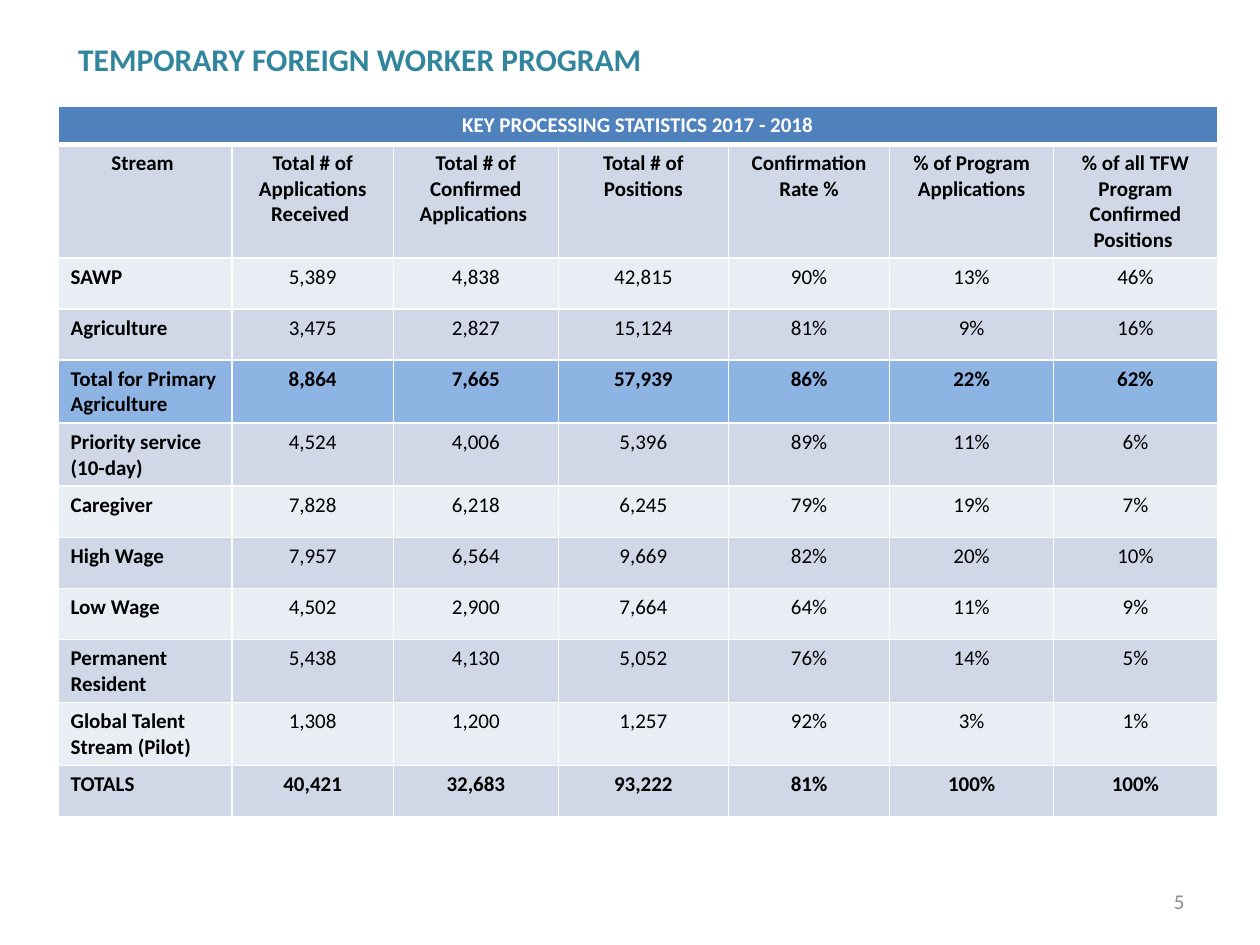
from lxml import etree
from pptx import Presentation
from pptx.dml.color import RGBColor
from pptx.enum import text
from pptx.oxml.ns import qn
from pptx.util import Pt

FONT = "Calibri"
WHITE, BLACK = "FFFFFF", "000000"
BANDS = ["E9EDF4", "D0D8E8"]
LEFT, CENTER, RIGHT = text.PP_ALIGN.LEFT, text.PP_ALIGN.CENTER, text.PP_ALIGN.RIGHT

BANNER = "KEY PROCESSING STATISTICS 2017 - 2018"
HEADINGS = ["Stream ", "Total # of Applications Received ",
            "Total # of Confirmed Applications ", "Total # of Positions",
            "Confirmation Rate %", "% of Program Applications",
            "% of all TFW Program Confirmed Positions "]
SUBTOTAL, TOTAL = "Total for Primary Agriculture", "TOTALS"
STREAMS = [
    ["SAWP", "5,389", "4,838", "42,815", "90%", "13%", "46%"],
    ["Agriculture", "3,475", "2,827", "15,124", "81%", "9%", "16%"],
    [SUBTOTAL, "8,864", "7,665", "57,939", "86%", "22%", "62%"],
    ["Priority service (10-day)", "4,524", "4,006", "5,396", "89%", "11%", "6%"],
    ["Caregiver", "7,828", "6,218", "6,245", "79%", "19%", "7%"],
    ["High Wage", "7,957", "6,564", "9,669", "82%", "20%", "10%"],
    ["Low Wage", "4,502", "2,900", "7,664", "64%", "11%", "9%"],
    ["Permanent Resident", "5,438", "4,130", "5,052", "76%", "14%", "5%"],
    ["Global Talent Stream (Pilot)", "1,308", "1,200", "1,257", "92%", "3%", "1%"],
    [TOTAL, "40,421", "32,683", "93,222", "81%", "100%", "100%"],
]
COLUMN_WIDTHS = [99.4, 92.2, 94.3, 97.2, 92.2, 93.6, 93.6]
BANNER_HEIGHT, ROW_HEIGHT = 22.1, 29.2


def color(value):
    return RGBColor.from_string(value)


def write(frame, words, align, size, ink, bold=False):
    paragraph = frame.paragraphs[0]
    paragraph.alignment = align
    run = paragraph.add_run()
    run.text = words
    for name, value in {"name": FONT, "size": Pt(size), "bold": bold}.items():
        setattr(run.font, name, value)
    run.font.color.rgb = color(ink)


def add_label(slide, box, words, align, size, ink, bold=False, **layout):
    frame = slide.shapes.add_textbox(*map(Pt, box)).text_frame
    for name, value in layout.items():
        setattr(frame, name, value)
    write(frame, words, align, size, ink, bold)


def add_borders(cell, widths):
    properties = cell._tc.get_or_add_tcPr()
    for side, width in zip("LRTB", widths):
        line = etree.SubElement(properties, qn(f"a:ln{side}"), w=str(Pt(width)))
        fill = etree.SubElement(line, qn("a:solidFill"))
        etree.SubElement(fill, qn("a:srgbClr"), val=WHITE)


def style_cell(cell, fill, widths=(1, 1, 1, 1)):
    add_borders(cell, widths)  # borders come before the fill in the cell
    cell.fill.solid()
    cell.fill.fore_color.rgb = color(fill)


def add_statistics(slide, left, top):
    body = [HEADINGS] + STREAMS
    height = BANNER_HEIGHT + ROW_HEIGHT * len(body)
    table = slide.shapes.add_table(
        len(body) + 1, len(HEADINGS), Pt(left), Pt(top),
        Pt(sum(COLUMN_WIDTHS)), Pt(height)).table
    for column, width in zip(table.columns, COLUMN_WIDTHS):
        column.width = Pt(width)
    for row in table.rows:
        row.height = Pt(ROW_HEIGHT)
    table.rows[0].height = Pt(BANNER_HEIGHT)

    # Banner across all columns
    for cell in table.rows[0].cells:
        style_cell(cell, "4F81BD", (1, 1, 1, 3))
    banner = table.cell(0, 0)
    banner.merge(table.cell(0, len(HEADINGS) - 1))
    write(banner.text_frame, BANNER, CENTER, 12, WHITE, True)

    # Headings and streams, in alternating bands
    for r, values in enumerate(body, 1):
        stream = values[0]
        fill = "8EB4E3" if stream == SUBTOTAL else BANDS[r % 2]
        bold_row = values is HEADINGS or stream in (SUBTOTAL, TOTAL)
        for c, value in enumerate(values):
            cell = table.cell(r, c)
            style_cell(cell, fill, (1, 1, 3 if r == 1 else 1, 1))
            align = LEFT if c == 0 and r > 1 else CENTER
            write(cell.text_frame, value, align, 12, BLACK, bold_row or c == 0)


def main():
    deck = Presentation()
    deck.slide_width, deck.slide_height = Pt(720), Pt(540)
    slide = deck.slides.add_slide(deck.slide_layouts[6])

    # Page number
    add_label(slide, (516, 500.5, 168, 28.75), "5", RIGHT, 12, "8C8C8C",
              word_wrap=True, vertical_anchor=text.MSO_ANCHOR.MIDDLE)
    add_statistics(slide, 33.2, 60.5)
    # Title
    add_label(slide, (37.6, 19.6, 344, 29), "TEMPORARY FOREIGN WORKER PROGRAM",
              LEFT, 18, "31859C", True, word_wrap=False,
              auto_size=text.MSO_AUTO_SIZE.SHAPE_TO_FIT_TEXT)
    deck.save("out.pptx")


if __name__ == "__main__":
    main()
